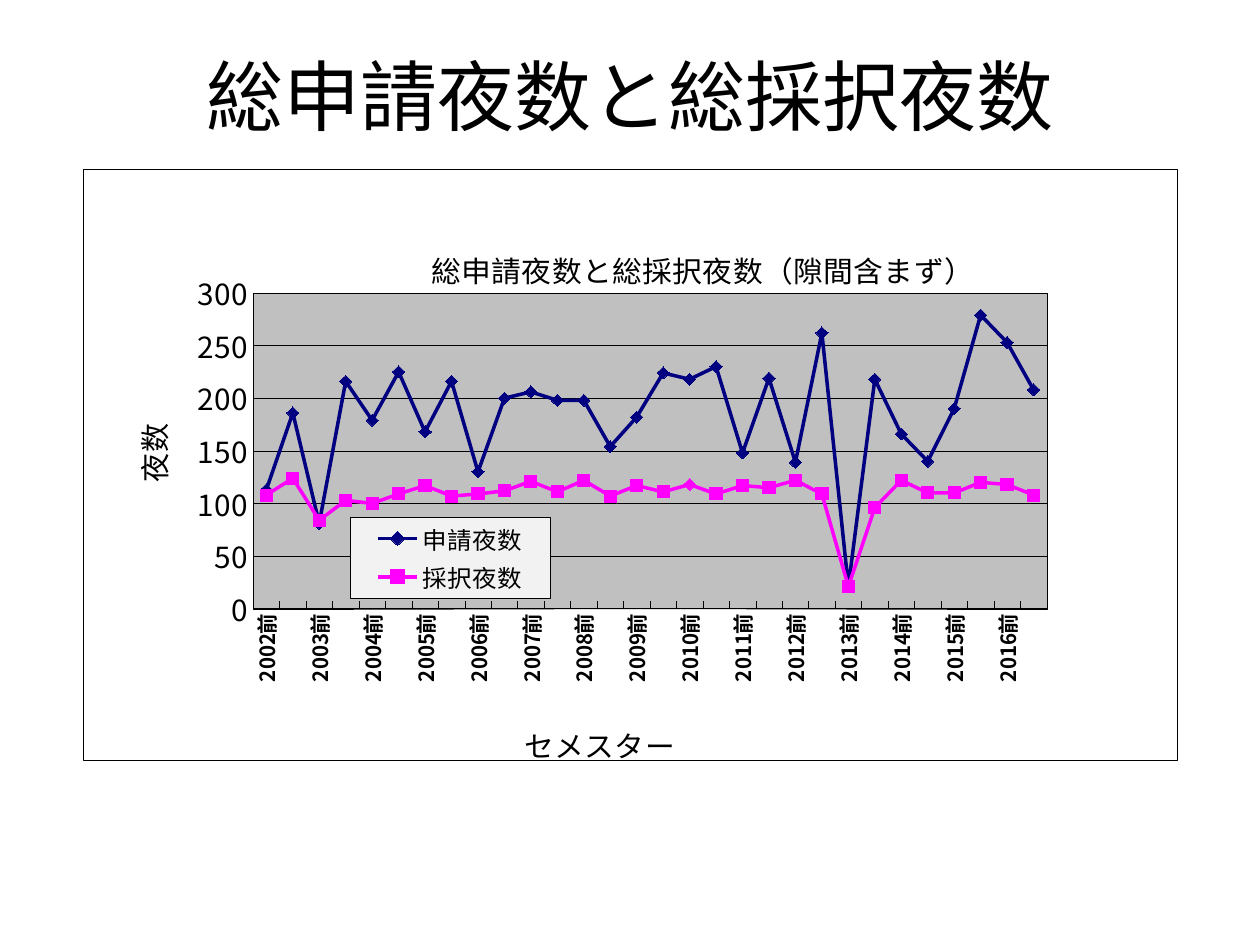
from lxml import etree
from pptx import Presentation
from pptx.chart.data import CategoryChartData
from pptx.dml.color import RGBColor
from pptx.enum import chart as kinds, text
from pptx.oxml import parse_xml
from pptx.oxml.ns import nsdecls, qn
from pptx.util import Pt

# Content
HEADING = "総申請夜数と総採択夜数"
CHART_TITLE = "総申請夜数と総採択夜数（隙間含まず）"
TERMS = [f"{year}{half}" for year in range(2002, 2017) for half in "前後"]
SQUARE, DIAMOND = kinds.XL_MARKER_STYLE.SQUARE, kinds.XL_MARKER_STYLE.DIAMOND
SERIES = [
    ("申請夜数", "000080", DIAMOND,
     [113, 186, 81, 216, 179, 225, 168, 216, 130, 200, 206, 198, 198, 154, 182,
      224, 218, 230, 148, 219, 139, 262, 21, 218, 166, 140, 190, 279, 253, 208]),
    ("採択夜数", "FF00FF", SQUARE,
     [108, 124, 84, 103, 100, 109, 117, 107, 109, 112, 121, 111, 122, 107, 117,
      111, 118, 109, 117, 115, 122, 109, 21, 96, 122, 110, 110, 120, 118, 108]),
]
FONT = "Noto Sans CJK JP"
CHART_BOX = (83, 169, 1094, 606)


def px(length):
    return round(length * 914400 / 126)


def color(value):
    return RGBColor.from_string(value)


def style_font(font, size, name=FONT, bold=False):
    font.size, font.name, font.bold = Pt(size), name, bold
    font.color.rgb = color("000000")


def style_line(line, value="000000", width=0.25):
    line.color.rgb = color(value)
    line.width = Pt(width)


def style_marker(marker, style, value):
    marker.style, marker.size = style, 7
    marker.format.fill.solid()
    marker.format.fill.fore_color.rgb = color(value)
    style_line(marker.format.line, value)


def area_format(fill):
    return parse_xml(
        f'<c:spPr {nsdecls("c", "a")}><a:solidFill><a:srgbClr val="{fill}"/></a:solidFill>'
        '<a:ln w="3175"><a:solidFill><a:srgbClr val="000000"/></a:solidFill></a:ln></c:spPr>')


def place(element, index, left, top, width=None, height=None, inner=False):
    """Fix a chart part at a page position in px."""
    for old in element.findall(qn("c:layout")):
        element.remove(old)
    layout = etree.Element(qn("c:layout"))
    manual = etree.SubElement(layout, qn("c:manualLayout"))
    x, y, w, h = CHART_BOX
    values = [("xMode", "edge"), ("yMode", "edge"),
              ("x", round((left - x) / w, 4)), ("y", round((top - y) / h, 4))]
    if inner:
        values.insert(0, ("layoutTarget", "inner"))
    if width:
        values += [("w", round(width / w, 4)), ("h", round(height / h, 4))]
    for tag, value in values:
        etree.SubElement(manual, qn("c:" + tag)).set("val", str(value))
    element.insert(index, layout)


def add_title(owner, words, left, top, rotation=0):
    title = owner.chart_title if hasattr(owner, "chart_title") else owner.axis_title
    frame = title.text_frame
    frame.text = words
    style_font(frame.paragraphs[0].runs[0].font, 17)
    body = title._element.find(".//" + qn("a:bodyPr"))
    body.set("rot", str(rotation * 60000))
    body.set("vert", "horz")
    place(title._element, 1, left, top)


# Page and heading
deck = Presentation()
deck.slide_width, deck.slide_height = px(1260), px(945)
page = deck.slides.add_slide(deck.slide_layouts[5])
heading = page.shapes.title
heading.left, heading.top, heading.width, heading.height = map(px, (63, 16, 1134, 158))
heading.fill.solid()
heading.fill.fore_color.rgb = color("FFFFFF")
frame = heading.text_frame
frame.text = HEADING
frame.vertical_anchor = text.MSO_ANCHOR.MIDDLE
frame.paragraphs[0].alignment = text.PP_ALIGN.CENTER
style_font(frame.paragraphs[0].runs[0].font, 44, "Calibri")

# Chart and series
data = CategoryChartData()
data.categories = TERMS
for name, _, _, nights in SERIES:
    data.add_series(name, nights)
chart = page.shapes.add_chart(
    kinds.XL_CHART_TYPE.LINE_MARKERS, *map(px, CHART_BOX), data).chart
style_font(chart.font, 17)
chart.element.find(qn("c:txPr")).addprevious(area_format("FFFFFF"))
chart.plots[0].vary_by_categories = False
for series, (_, value, style, _) in zip(chart.plots[0].series, SERIES):
    series.smooth = False
    style_line(series.format.line, value, 2)
    style_marker(series.marker, style, value)
odd_point = chart.plots[0].series[1].points[TERMS.index("2010前")]
style_marker(odd_point.marker, DIAMOND, "FF00FF")
style_line(odd_point.format.line, "FF00FF", 2)

# Plot area
plot_area = chart.element.find(".//" + qn("c:plotArea"))
place(plot_area, 0, 253, 296, 794, 324, inner=True)
plot_area.append(area_format("C0C0C0"))

# Axes
terms, nights = chart.category_axis, chart.value_axis
for axis, size, bold in ((terms, 12, True), (nights, 17, False)):
    axis.major_tick_mark = kinds.XL_TICK_MARK.INSIDE
    axis.minor_tick_mark = kinds.XL_TICK_MARK.NONE
    style_line(axis.format.line)
    style_font(axis.tick_labels.font, size, bold=bold)
nights.minimum_scale, nights.maximum_scale, nights.major_unit = 0, 300, 50
nights.has_major_gridlines = True
style_line(nights.major_gridlines.format.line)
label_body = terms._element.find(qn("c:txPr")).find(qn("a:bodyPr"))
label_body.set("rot", "-5400000")
label_body.set("vert", "horz")
last = terms._element.find(qn("c:noMultiLvlLbl"))
for tag, step in (("tickLblSkip", 2), ("tickMarkSkip", 1)):
    skip = etree.Element(qn("c:" + tag))
    skip.set("val", str(step))
    last.addprevious(skip)

# Titles
add_title(chart, CHART_TITLE, 426, 241)
add_title(terms, "セメスター", 519, 728)
add_title(nights, "夜数", 122, 425, rotation=-90)

# Legend
chart.has_legend = True
legend = chart.legend
legend.position = kinds.XL_LEGEND_POSITION.RIGHT
legend.include_in_layout = False
style_font(legend.font, 14)
place(legend._element, 1, 350, 526, 200, 83)
legend._element.find(qn("c:overlay")).addnext(area_format("F2F2F2"))

deck.save("out.pptx")
